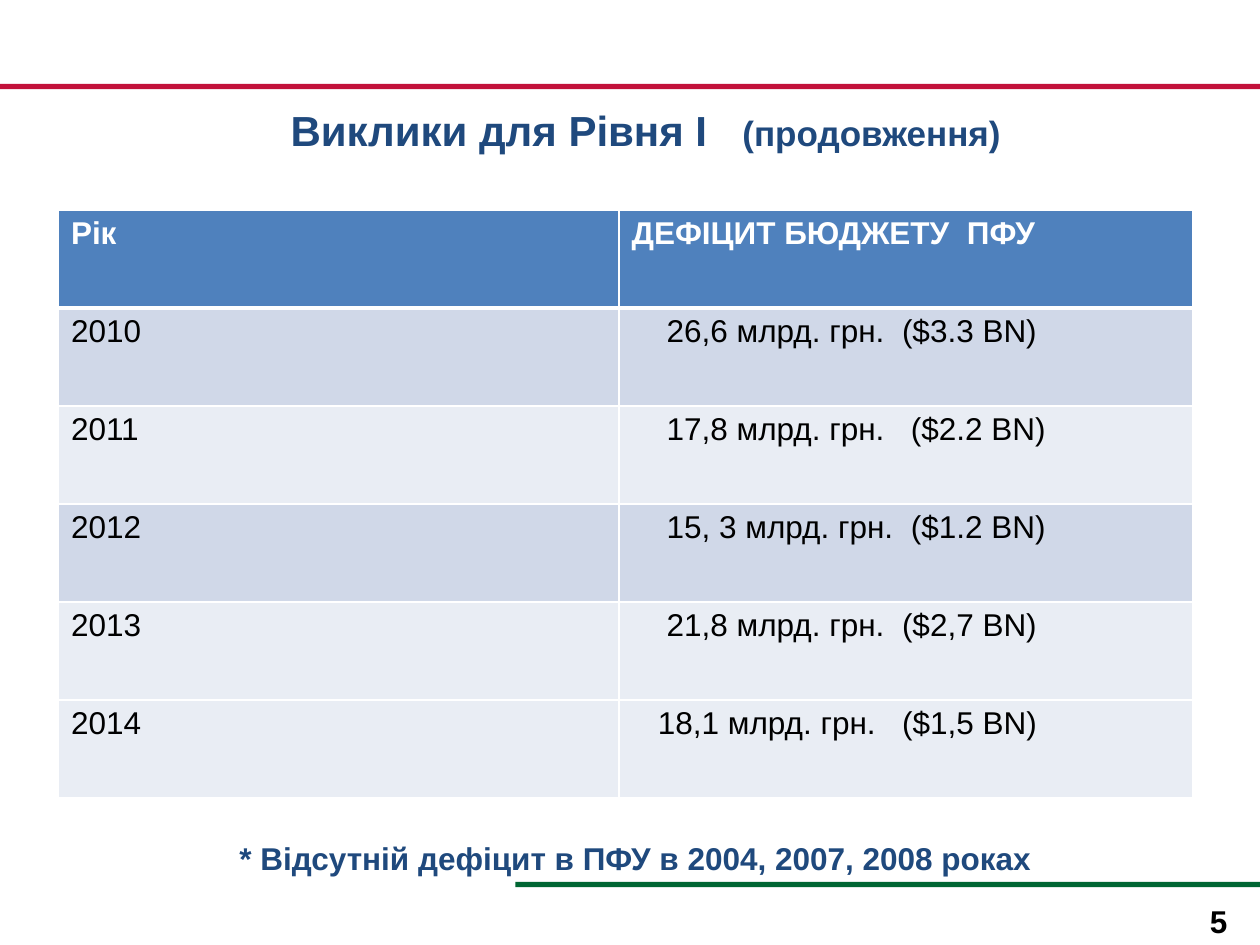
from dataclasses import dataclass

from lxml.etree import SubElement
from pptx import Presentation
from pptx.dml.color import RGBColor
from pptx.enum.shapes import MSO_SHAPE
from pptx.enum.text import MSO_ANCHOR, MSO_AUTO_SIZE, PP_ALIGN
from pptx.oxml.ns import qn
from pptx.util import Pt


@dataclass(frozen=True)
class Theme:
    font: str = "Arial"
    red: str = "C2113A"
    green: str = "006633"
    navy: str = "1F497D"
    header: str = "4F81BD"
    dark_band: str = "D0D8E8"
    light_band: str = "E9EDF4"
    white: str = "FFFFFF"
    black: str = "000000"
    title_size: int = 24
    subtitle_size: int = 20
    body_size: int = 18


class SlideBuilder:
    """Draws styled elements on one slide, with lengths in points."""

    def __init__(self, slide, theme):
        self.slide = slide
        self.theme = theme

    def add_runs(self, paragraph, texts, color, size, bold, gap=0):
        for index, text in enumerate(texts):
            if index:
                self.add_run(paragraph, " ", color, size, bold, gap)
            self.add_run(paragraph, text, color, size, bold)

    def add_run(self, paragraph, text, color, size, bold, tracking=0):
        run = paragraph.add_run()
        run.text = text
        font = run.font
        font.name = self.theme.font
        font.size = Pt(size)
        font.bold = bold
        font.color.rgb = RGBColor.from_string(color)
        if tracking:
            font._element.set("spc", str(round(tracking * 100)))

    def bar(self, left, top, width, height, color):
        shape = self.slide.shapes.add_shape(
            MSO_SHAPE.RECTANGLE, Pt(left), Pt(top), Pt(width), Pt(height))
        shape.shadow.inherit = False
        shape.fill.solid()
        shape.fill.fore_color.rgb = RGBColor.from_string(color)
        shape.line.fill.background()

    def frame(self, shape, alignment):
        text_frame = shape.text_frame
        text_frame.word_wrap = True
        text_frame.auto_size = MSO_AUTO_SIZE.NONE
        text_frame.vertical_anchor = MSO_ANCHOR.TOP
        text_frame.margin_top = Pt(5.5)
        paragraph = text_frame.paragraphs[0]
        paragraph.alignment = alignment
        return paragraph

    def title(self, left, top, width, height, heading, suffix):
        shape = self.slide.shapes.title
        shape.left, shape.top = Pt(left), Pt(top)
        shape.width, shape.height = Pt(width), Pt(height)
        paragraph = self.frame(shape, PP_ALIGN.CENTER)
        theme = self.theme
        self.add_run(paragraph, heading, theme.navy, theme.title_size, True)
        self.add_run(paragraph, " ", theme.navy, theme.title_size, True, 13.3)
        self.add_run(paragraph, suffix, theme.navy, theme.subtitle_size, True)

    def text(self, left, top, width, height, text, color, alignment):
        shape = self.slide.shapes.add_textbox(
            Pt(left), Pt(top), Pt(width), Pt(height))
        paragraph = self.frame(shape, alignment)
        self.add_run(paragraph, text, color, self.theme.body_size, True)

    def borders(self, cell, top, bottom):
        properties = cell._tc.get_or_add_tcPr()
        for side, width in (("L", 1), ("R", 1), ("T", top), ("B", bottom)):
            line = SubElement(properties, qn(f"a:ln{side}"), w=str(Pt(width)))
            fill = SubElement(line, qn("a:solidFill"))
            SubElement(fill, qn("a:srgbClr"), val=self.theme.white)

    def table(self, left, top, column_widths, row_height, rows, fills):
        theme = self.theme
        table = self.slide.shapes.add_table(
            len(rows), len(column_widths), Pt(left), Pt(top),
            Pt(sum(column_widths)), Pt(row_height * len(rows))).table
        for column, width in zip(table.columns, column_widths):
            column.width = Pt(width)
        for row_index, (year, amounts, indent, gap) in enumerate(rows):
            table.rows[row_index].height = Pt(row_height)
            is_header = row_index == 0
            color = theme.white if is_header else theme.black
            for column_index, texts in enumerate(([year], amounts)):
                cell = table.cell(row_index, column_index)
                self.borders(cell, 3 if row_index == 1 else 1,
                             3 if is_header else 1)
                cell.fill.solid()
                cell.fill.fore_color.rgb = RGBColor.from_string(
                    fills[row_index])
                cell.margin_left = Pt(7.2 + indent * column_index)
                self.add_runs(cell.text_frame.paragraphs[0], texts, color,
                              theme.body_size, is_header, gap)


def main():
    presentation = Presentation()
    presentation.slide_width, presentation.slide_height = Pt(720), Pt(540)
    slide = presentation.slides.add_slide(presentation.slide_layouts[5])
    theme = Theme()
    builder = SlideBuilder(slide, theme)

    builder.bar(0, 48, 720, 3, theme.red)
    builder.bar(294.5, 504, 425.5, 3, theme.green)
    builder.text(672, 510, 36.5, 24, "5", theme.black, PP_ALIGN.RIGHT)
    rows = [
        ("Рік", ["ДЕФІЦИТ БЮДЖЕТУ", "ПФУ"], 0, 5),
        ("2010", ["26,6 млрд. грн.", "($3.3 BN)"], 20, 5),
        ("2011", ["17,8 млрд. грн.", "($2.2 BN)"], 20, 10),
        ("2012", ["15, 3 млрд. грн.", "($1.2 BN)"], 20, 5),
        ("2013", ["21,8 млрд. грн.", "($2,7 BN)"], 20, 5),
        ("2014", ["18,1 млрд. грн.", "($1,5 BN)"], 15, 10),
    ]
    fills = [theme.header, theme.dark_band, theme.light_band,
             theme.dark_band, theme.light_band, theme.light_band]
    builder.table(33.4, 120, [320.4, 327.6], 56, rows, fills)
    builder.text(33, 474, 660, 36,
                 "* Відсутній дефіцит в ПФУ в 2004, 2007, 2008 роках",
                 theme.navy, PP_ALIGN.CENTER)
    builder.title(30, 54, 678, 54, "Виклики для Рівня І", "(продовження)")
    presentation.save("out.pptx")


if __name__ == "__main__":
    main()
